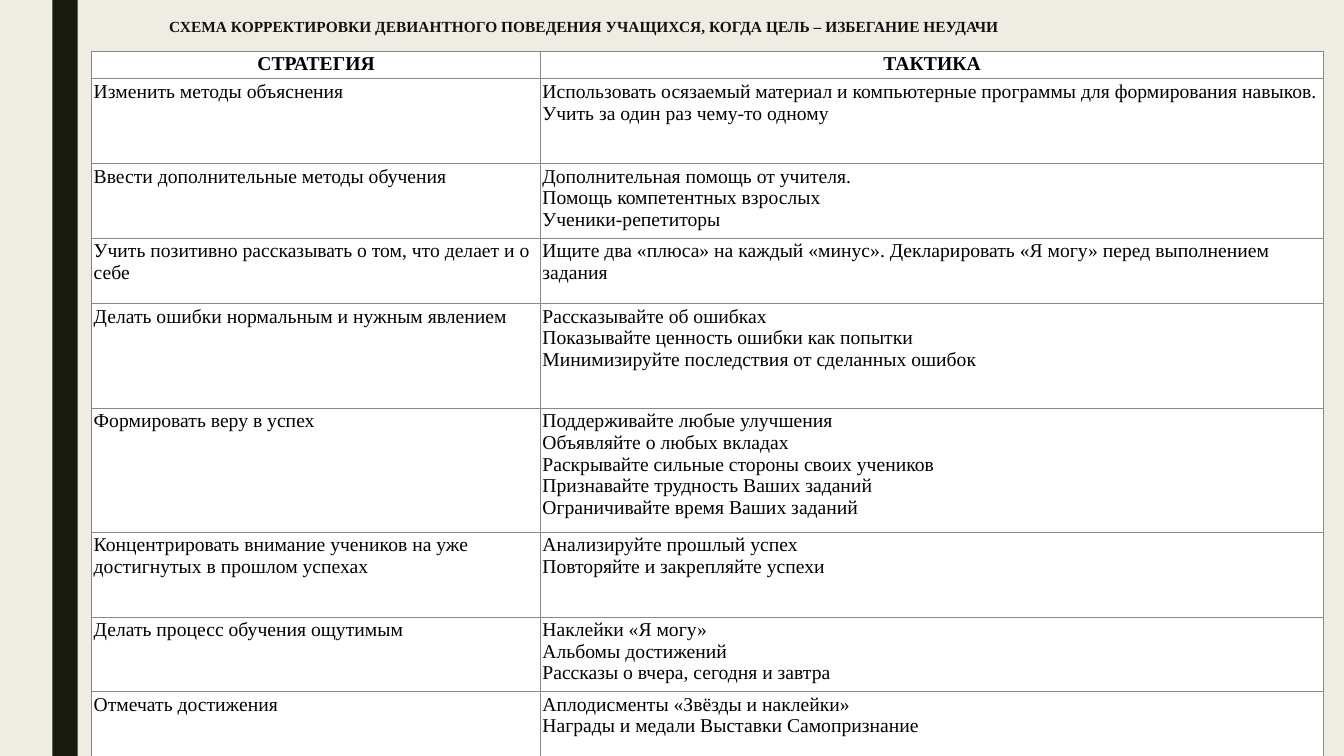
import dataclasses

import lxml.etree
import pptx
import pptx.dml.color
import pptx.enum.shapes
import pptx.enum.text
import pptx.oxml.ns
import pptx.slide
import pptx.table
import pptx.text.text
import pptx.util

Inches = pptx.util.Inches
Pt = pptx.util.Pt
RGBColor = pptx.dml.color.RGBColor
Align = pptx.enum.text.PP_ALIGN

BACKGROUND = RGBColor(0xEF, 0xED, 0xE3)
STRIPE = RGBColor(0x19, 0x1B, 0x0E)
TITLE_COLOR = RGBColor(0x11, 0x11, 0x11)
BLACK = RGBColor(0x00, 0x00, 0x00)
WHITE = RGBColor(0xFF, 0xFF, 0xFF)
BORDER = RGBColor(0x88, 0x88, 0x88)
FONT = "Times New Roman"
COLUMN_WIDTHS = (4.45, 7.77)
CELL_MARGIN = Inches(0.02)


@dataclasses.dataclass(frozen=True)
class Row:
    height: float
    strategy: str
    tactics: tuple[str, ...]
    header: bool = False


ROWS = (
    Row(0.24, "СТРАТЕГИЯ", ("ТАКТИКА",), header=True),
    Row(0.84, "Изменить методы объяснения", (
        "Использовать осязаемый материал и компьютерные программы для формирования навыков.",
        "Учить за один раз чему-то одному",
    )),
    Row(0.68, "Ввести дополнительные методы обучения", (
        "Дополнительная помощь от учителя.",
        "Помощь компетентных взрослых",
        "Ученики-репетиторы",
    )),
    Row(0.65, "Учить позитивно рассказывать о том, что делает и о себе", (
        "Ищите два «плюса» на каждый «минус». Декларировать «Я могу» перед выполнением задания",
    )),
    Row(1.04, "Делать ошибки нормальным и нужным явлением", (
        "Рассказывайте об ошибках",
        "Показывайте ценность ошибки как попытки",
        "Минимизируйте последствия от сделанных ошибок",
    )),
    Row(1.23, "Формировать веру в успех", (
        "Поддерживайте любые улучшения",
        "Объявляйте о любых вкладах",
        "Раскрывайте сильные стороны своих учеников",
        "Признавайте трудность Ваших заданий",
        "Ограничивайте время Ваших заданий",
    )),
    Row(0.84, "Концентрировать внимание учеников на уже достигнутых в прошлом успехах", (
        "Анализируйте прошлый успех",
        "Повторяйте и закрепляйте успехи",
    )),
    Row(0.68, "Делать процесс обучения ощутимым", (
        "Наклейки «Я могу»",
        "Альбомы достижений",
        "Рассказы о вчера, сегодня и завтра",
    )),
    Row(0.65, "Отмечать достижения", (
        "Аплодисменты «Звёзды и наклейки»",
        "Награды и медали Выставки Самопризнание",
    )),
)


def write_text(
    frame: pptx.text.text.TextFrame,
    lines: tuple[str, ...],
    *,
    size: float = 14,
    color: RGBColor = BLACK,
    bold: bool = False,
    alignment: Align = Align.LEFT,
    line_spacing: float = 1.0,
) -> None:
    for index, line in enumerate(lines):
        paragraph = frame.add_paragraph() if index else frame.paragraphs[0]
        paragraph.alignment = alignment
        paragraph.line_spacing = line_spacing
        run = paragraph.add_run()
        run.text = line
        run.font.name = FONT
        run.font.size = Pt(size)
        run.font.bold = bold
        run.font.color.rgb = color


def add_stripe(slide: pptx.slide.Slide) -> None:
    stripe = slide.shapes.add_shape(
        pptx.enum.shapes.MSO_SHAPE.RECTANGLE,
        Inches(0.52), Inches(0), Inches(0.25), Inches(7.5),
    )
    stripe.shadow.inherit = False
    stripe.fill.solid()
    stripe.fill.fore_color.rgb = STRIPE
    stripe.line.fill.background()


def add_title(slide: pptx.slide.Slide) -> None:
    title = slide.shapes.add_textbox(Inches(1.58), Inches(0.14), Inches(10.5), Inches(0.57))
    title.text_frame.word_wrap = True
    write_text(
        title.text_frame,
        ("СХЕМА КОРРЕКТИРОВКИ ДЕВИАНТНОГО ПОВЕДЕНИЯ УЧАЩИХСЯ, КОГДА ЦЕЛЬ – ИЗБЕГАНИЕ НЕУДАЧИ",),
        size=11, color=TITLE_COLOR, bold=True, line_spacing=0.89,
    )


def add_borders(cell: pptx.table._Cell) -> None:
    qualified = pptx.oxml.ns.qn
    properties = cell._tc.get_or_add_tcPr()
    for side in ("lnL", "lnR", "lnT", "lnB"):
        line = lxml.etree.SubElement(properties, qualified(f"a:{side}"), w=str(Pt(0.75)))
        fill = lxml.etree.SubElement(line, qualified("a:solidFill"))
        lxml.etree.SubElement(fill, qualified("a:srgbClr"), val=str(BORDER))


def fill_cell(cell: pptx.table._Cell, lines: tuple[str, ...], header: bool) -> None:
    cell.margin_left = cell.margin_right = CELL_MARGIN
    cell.margin_top = cell.margin_bottom = CELL_MARGIN
    add_borders(cell)
    cell.fill.solid()
    cell.fill.fore_color.rgb = WHITE
    alignment = Align.CENTER if header else Align.LEFT
    write_text(cell.text_frame, lines, bold=header, alignment=alignment)


def add_strategy_table(slide: pptx.slide.Slide) -> None:
    table = slide.shapes.add_table(
        len(ROWS), len(COLUMN_WIDTHS),
        Inches(0.91), Inches(0.51),
        Inches(sum(COLUMN_WIDTHS)), Inches(sum(row.height for row in ROWS)),
    ).table
    table.horz_banding = False
    for column, width in zip(table.columns, COLUMN_WIDTHS):
        column.width = Inches(width)
    for index, row in enumerate(ROWS):
        table.rows[index].height = Inches(row.height)
        fill_cell(table.cell(index, 0), (row.strategy,), row.header)
        fill_cell(table.cell(index, 1), row.tactics, row.header)


def main() -> None:
    presentation = pptx.Presentation()
    presentation.slide_width = Inches(13.33)
    presentation.slide_height = Inches(7.5)
    slide = presentation.slides.add_slide(presentation.slide_layouts[6])
    slide.background.fill.solid()
    slide.background.fill.fore_color.rgb = BACKGROUND
    add_stripe(slide)
    add_title(slide)
    add_strategy_table(slide)
    presentation.save("out.pptx")


if __name__ == "__main__":
    main()
